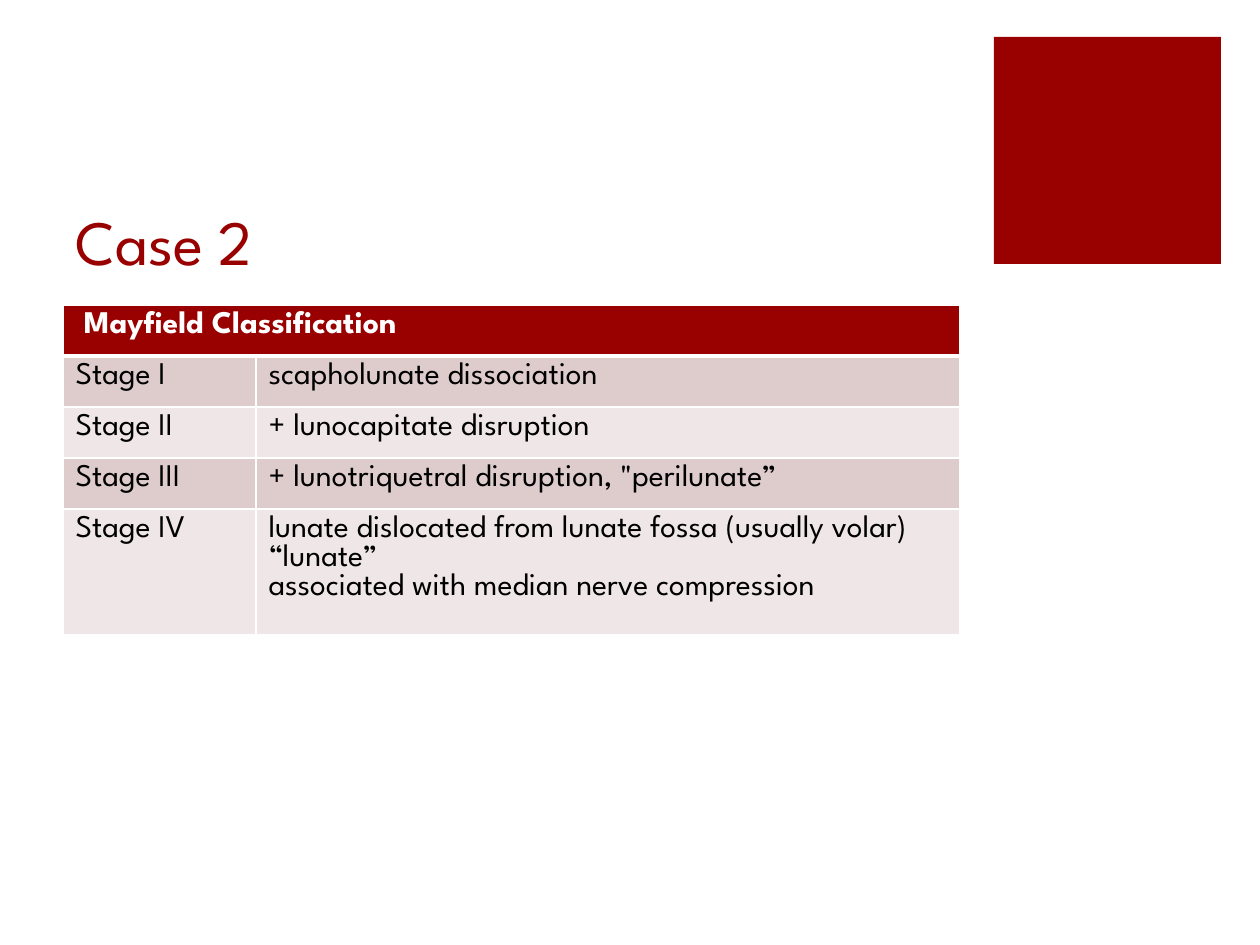
from dataclasses import dataclass

from lxml import etree
from pptx import Presentation
from pptx.dml.color import RGBColor
from pptx.enum.shapes import MSO_SHAPE
from pptx.enum.text import MSO_ANCHOR
from pptx.oxml.ns import qn
from pptx.util import Emu, Pt

RECTANGLE = MSO_SHAPE.RECTANGLE
BOTTOM = MSO_ANCHOR.BOTTOM
EMU_PER_PX = 914400 / 126


@dataclass(frozen=True)
class Theme:
    font: str = "League Spartan"
    accent: str = "990000"
    white: str = "FFFFFF"
    ink: str = "000000"
    bands: tuple[str, str] = ("DECCCC", "EFE7E7")
    title_size: int = 36
    table_size: int = 18
    rule: int = 1
    header_rule: int = 3


@dataclass(frozen=True)
class Box:
    left: int
    top: int
    width: int
    height: int

    def emu(self) -> tuple[Emu, ...]:
        return tuple(px(n) for n in (self.left, self.top, self.width, self.height))


@dataclass(frozen=True)
class Stage:
    label: str
    finding: str
    height: int = 51


THEME = Theme()
ACCENT_SQUARE = Box(994, 37, 227, 227)
TITLE_BOX = Box(63, 126, 897, 158)
TABLE_LEFT, TABLE_TOP = 63, 305
COLUMN_WIDTHS = (193, 704)
HEADER_HEIGHT = 51
STAGES = (
    Stage("Stage I", "scapholunate dissociation"),
    Stage("Stage II", "+ lunocapitate disruption"),
    Stage("Stage III", '+ lunotriquetral disruption, "perilunate”'),
    Stage("Stage IV", "lunate dislocated from lunate fossa (usually volar) “lunate”\n"
          "associated with median nerve compression", 99),
)


def px(length: int) -> Emu:
    return Emu(round(length * EMU_PER_PX))


def write(frame, text: str, *, size: int, color: str, bold: bool = False) -> None:
    frame.word_wrap = True
    paragraph = frame.paragraphs[0]
    paragraph.text = text
    for run in paragraph.runs:
        run.font.name = THEME.font
        run.font.size = Pt(size)
        run.font.bold = bold
        run.font.color.rgb = RGBColor.from_string(color)


def set_borders(cell, top: int, bottom: int) -> None:
    """Draw white rules round a cell, with widths in points."""
    properties = cell._tc.get_or_add_tcPr()
    sides = {"L": THEME.rule, "R": THEME.rule, "T": top, "B": bottom}
    for position, (side, width) in enumerate(sides.items()):
        line = etree.Element(qn(f"a:ln{side}"), w=str(Pt(width)))
        fill = etree.SubElement(line, qn("a:solidFill"))
        etree.SubElement(fill, qn("a:srgbClr"), val=THEME.white)
        properties.insert(position, line)


def style_cell(cell, fill: str, top: int, bottom: int) -> None:
    cell.fill.solid()
    cell.fill.fore_color.rgb = RGBColor.from_string(fill)
    set_borders(cell, top, bottom)


def add_accent_square(slide) -> None:
    square = slide.shapes.add_shape(RECTANGLE, *ACCENT_SQUARE.emu())
    square.shadow.inherit = False
    square.fill.solid()
    square.fill.fore_color.rgb = RGBColor.from_string(THEME.accent)
    square.line.fill.background()


def add_title(slide) -> None:
    frame = slide.shapes.add_textbox(*TITLE_BOX.emu()).text_frame
    frame.vertical_anchor = BOTTOM
    write(frame, "Case 2", size=THEME.title_size, color=THEME.accent)


def add_classification(slide, stages: tuple[Stage, ...]) -> None:
    heights = [HEADER_HEIGHT] + [stage.height for stage in stages]
    bounds = Box(TABLE_LEFT, TABLE_TOP, sum(COLUMN_WIDTHS), sum(heights))
    table = slide.shapes.add_table(len(heights), len(COLUMN_WIDTHS), *bounds.emu()).table
    for column, width in zip(table.columns, COLUMN_WIDTHS):
        column.width = px(width)
    for row, height in zip(table.rows, heights):
        row.height = px(height)

    header = table.cell(0, 0)
    header.merge(table.cell(0, len(COLUMN_WIDTHS) - 1))
    for cell in table.rows[0].cells:
        style_cell(cell, THEME.accent, THEME.rule, THEME.header_rule)
    write(header.text_frame, " Mayfield Classification",
          size=THEME.table_size, color=THEME.white, bold=True)

    for index, stage in enumerate(stages):
        top = THEME.rule if index else THEME.header_rule
        band = THEME.bands[index % len(THEME.bands)]
        for cell, text in zip(table.rows[index + 1].cells, (stage.label, stage.finding)):
            style_cell(cell, band, top, THEME.rule)
            write(cell.text_frame, text, size=THEME.table_size, color=THEME.ink)


def main() -> None:
    presentation = Presentation()
    presentation.slide_width = px(1260)
    presentation.slide_height = px(945)
    slide = presentation.slides.add_slide(presentation.slide_layouts[6])
    add_accent_square(slide)
    add_title(slide)
    add_classification(slide, STAGES)
    presentation.save("out.pptx")


if __name__ == "__main__":
    main()
